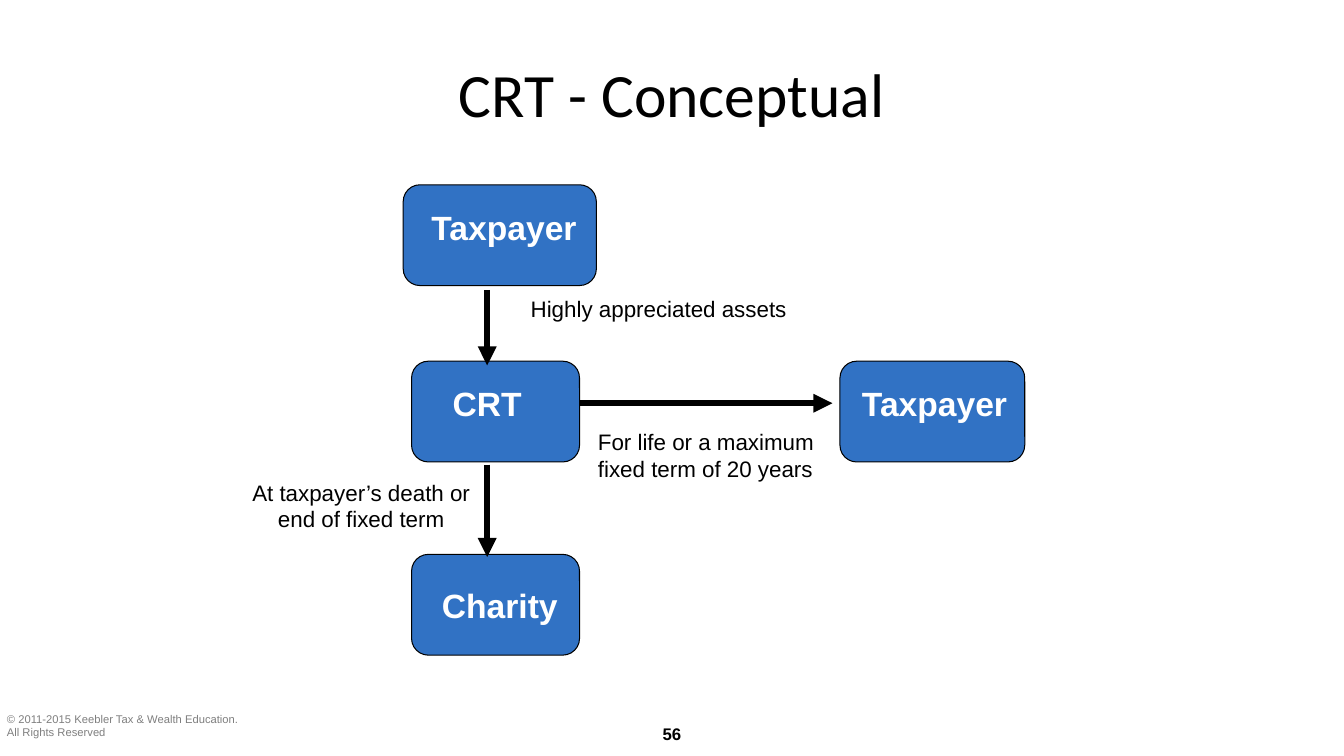
import pptx
import pptx.dml.color
import pptx.enum.shapes
import pptx.enum.text
import pptx.oxml
import pptx.oxml.ns
import pptx.util

COLORS = {"box": "3172C4", "ink": "000000", "paper": "FFFFFF", "muted": "7F7F7F"}
COLUMNS, ROWS = 160, 90
ALIGN = pptx.enum.text.PP_ALIGN
ANCHOR = pptx.enum.text.MSO_ANCHOR
SHAPES = pptx.enum.shapes.MSO_SHAPE

FORMATS = {
    "title": {"name": "Calibri", "size": 44, "color": "ink"},
    "box": {"name": "Arial", "size": 24, "bold": True, "color": "paper"},
    "note": {"name": "Arial", "size": 16, "color": "ink"},
    "number": {"name": "Arial", "size": 12, "bold": True, "color": "ink"},
    "footer": {"name": "Arial", "size": 8, "color": "muted"},
}


class FlowSlide:
    """Draw flow chart elements on one slide, placed on a grid of columns and rows."""

    def __init__(self, presentation):
        self.cell_width = presentation.slide_width / COLUMNS
        self.cell_height = presentation.slide_height / ROWS
        self.slide = presentation.slides.add_slide(presentation.slide_layouts[6])
        self.shapes = self.slide.shapes

    def place(self, *grid):
        cells = (self.cell_width, self.cell_height) * 2
        return [round(value * cell) for value, cell in zip(grid, cells)]

    def color(self, name):
        return pptx.dml.color.RGBColor.from_string(COLORS[name])

    def fill_text(self, shape, lines, style, align, wrap, anchor=ANCHOR.TOP):
        frame = shape.text_frame
        settings = {
            "word_wrap": wrap,
            "vertical_anchor": anchor,
            "auto_size": pptx.enum.text.MSO_AUTO_SIZE.NONE,
        }
        for name, value in settings.items():
            setattr(frame, name, value)
        for index, line in enumerate(lines):
            paragraph = frame.add_paragraph() if index else frame.paragraphs[0]
            paragraph.alignment = align
            run = paragraph.add_run()
            run.text = line
            for name, value in FORMATS[style].items():
                if name == "color":
                    run.font.color.rgb = self.color(value)
                else:
                    setattr(run.font, name, pptx.util.Pt(value) if name == "size" else value)

    def text(self, grid, lines, style, align=ALIGN.CENTER, wrap=True, anchor=ANCHOR.TOP):
        shape = self.shapes.add_textbox(*self.place(*grid))
        self.fill_text(shape, lines, style, align, wrap, anchor)

    def panel(self, kind, grid):
        shape = self.shapes.add_shape(kind, *self.place(*grid))
        shape.shadow.inherit = False
        shape.fill.solid()
        shape.fill.fore_color.rgb = self.color("box")
        return shape

    def box(self, grid):
        shape = self.panel(SHAPES.ROUNDED_RECTANGLE, grid)
        shape.line.color.rgb = self.color("ink")
        shape.line.width = pptx.util.Pt(0.75)

    def label(self, grid, caption):
        shape = self.panel(SHAPES.RECTANGLE, grid)
        shape.line.fill.background()
        self.fill_text(shape, [caption], "box", ALIGN.CENTER, True)

    def arrow(self, grid):
        connector = self.shapes.add_connector(
            pptx.enum.shapes.MSO_CONNECTOR.STRAIGHT, *self.place(*grid))
        connector.line.color.rgb = self.color("ink")
        connector.line.width = pptx.util.Pt(4.5)
        namespace = pptx.oxml.ns.nsdecls("a")
        properties = connector._element.spPr
        properties.get_or_add_ln().append(
            pptx.oxml.parse_xml(f'<a:tailEnd {namespace} type="triangle"/>'))
        properties.append(pptx.oxml.parse_xml(f"<a:effectLst {namespace}/>"))


def main():
    presentation = pptx.Presentation()
    presentation.slide_width = pptx.util.Inches(13.33)
    presentation.slide_height = pptx.util.Inches(7.5)
    flow = FlowSlide(presentation)

    flow.text((-0.36, 84.2, 30.6, 4.4),
              ["© 2011-2015 Keebler Tax & Wealth Education.", "All Rights Reserved"],
              "footer", ALIGN.LEFT, wrap=False)
    flow.text((74, 85.6, 12, 3.6), ["56"], "number")
    flow.text((8, 3.6, 144, 15), ["CRT - Conceptual"], "title", anchor=ANCHOR.MIDDLE)

    for left, top, width in ((48, 22, 23), (49, 43, 20), (49, 66, 20), (100, 43, 22)):
        flow.box((left, top, width, 12))
    for ends in ((58, 34.5, 58, 43.5), (58, 55.3, 58, 66.3), (69.1, 48, 99.1, 48)):
        flow.arrow(ends)

    flow.label((51, 69, 17, 6), "Charity")
    flow.label((100.8, 45, 20.9, 6), "Taxpayer")
    flow.text((49, 45, 18, 6), ["CRT"], "box")
    flow.text((48, 24, 24, 6), ["Taxpayer"], "box")

    flow.text((62, 34.5, 32.9, 4.4), ["Highly appreciated assets"], "note",
              ALIGN.LEFT, wrap=False)
    flow.text((70, 50.4, 33, 7.7), ["For life or a maximum fixed term of 20 years"],
              "note", ALIGN.LEFT)
    flow.text((28, 56.4, 30, 7.7), ["At taxpayer’s death or end of fixed term"], "note")

    presentation.save("out.pptx")


if __name__ == "__main__":
    main()
